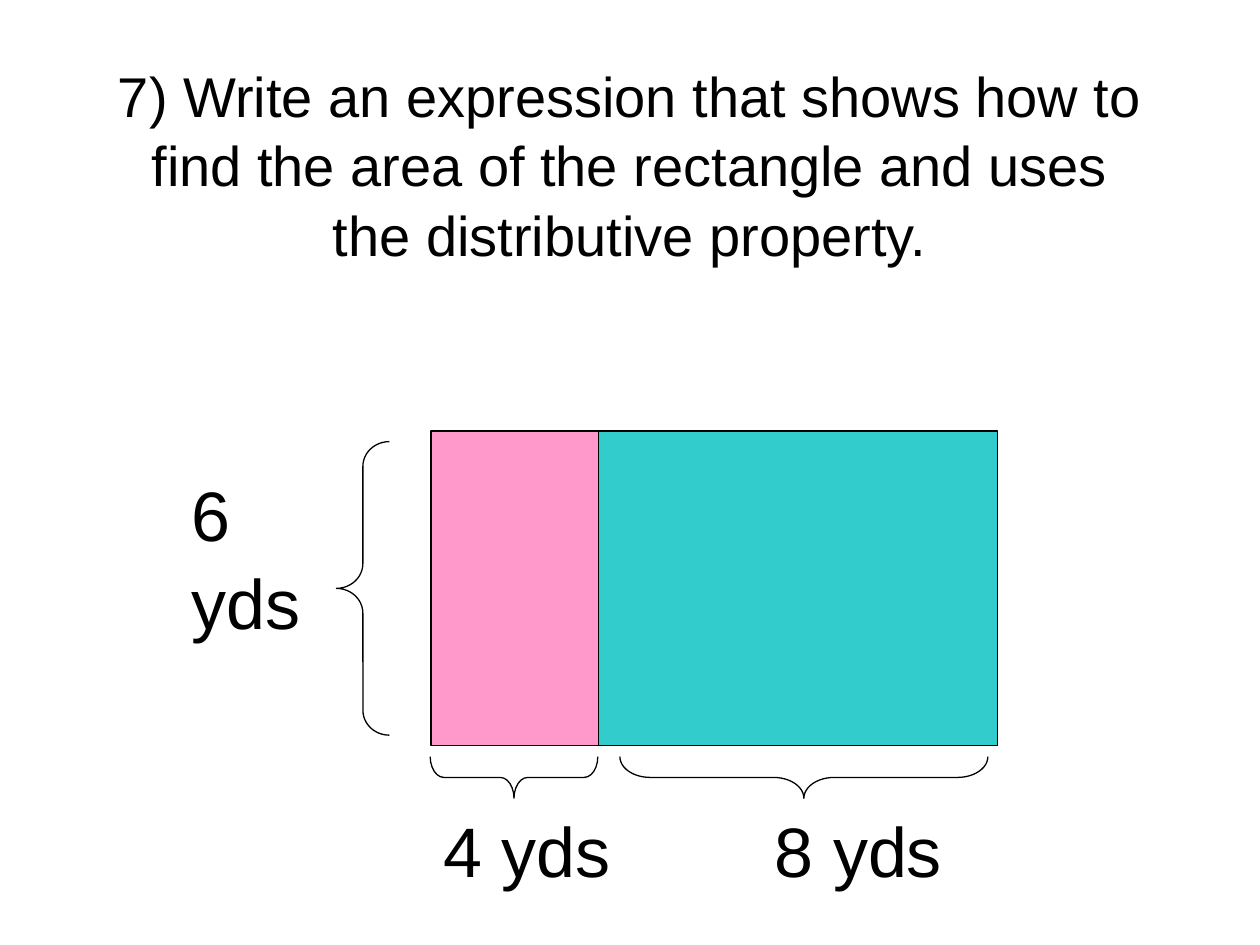
from pptx import Presentation
from pptx.dml.color import RGBColor
from pptx.enum import shapes, text
from pptx.util import Inches, Pt

BLACK = RGBColor(0, 0, 0)
PINK = RGBColor(0xFF, 0x99, 0xCC)
TEAL = RGBColor(0x33, 0xCC, 0xCC)

TITLE = ("7) Write an expression that shows how to find the area of the "
         "rectangle and uses the distributive property.")
TOP, HEIGHT = 3.42, 2.5
# left, width, fill
PARTS = [(3.42, 1.33, PINK), (4.75, 3.17, TEAL)]
# text, left, top, width, height
LABELS = [
    ("6 yds", 1.42, 3.67, 1.25, 1.43),
    ("4 yds", 3.42, 6.33, 1.67, 0.77),
    ("8 yds", 6.05, 6.33, 2.61, 0.77),
]
# centre x, centre y, depth, span, curve, rotation
BRACES = [
    (2.88, 4.67, 0.42, 2.33, 0.47, 0),
    (6.38, 6.17, 0.33, 2.92, 0.73, 270),
    (4.08, 6.17, 0.33, 1.33, 0.33, 270),
]


def write(tf, words, size, align):
    tf.word_wrap = True
    p = tf.paragraphs[0]
    p.text = words
    p.alignment = align
    p.line_spacing = 1.04
    p.font.name = "Arial"
    p.font.size = Pt(size)
    p.font.color.rgb = BLACK


def add_outlined(s, kind, *box):
    sp = s.shapes.add_shape(kind, *map(Inches, box))
    sp.shadow.inherit = False
    sp.line.color.rgb = BLACK
    sp.line.width = Pt(0.75)
    return sp


prs = Presentation()
prs.slide_width, prs.slide_height = Inches(10), Inches(7.5)
s = prs.slides.add_slide(prs.slide_layouts[5])

# Question
title = s.shapes.title
title.left, title.top, title.width, title.height = map(
    Inches, (0.75, 0.67, 8.5, 1.25))
title.text_frame.vertical_anchor = text.MSO_ANCHOR.MIDDLE
write(title.text_frame, TITLE, 32, text.PP_ALIGN.CENTER)

# Two-part rectangle
for left, width, fill in PARTS:
    sp = add_outlined(s, shapes.MSO_SHAPE.RECTANGLE, left, TOP, width, HEIGHT)
    sp.fill.solid()
    sp.fill.fore_color.rgb = fill

# Side lengths
for words, *box in LABELS:
    tf = s.shapes.add_textbox(*map(Inches, box)).text_frame
    write(tf, words, 40, text.PP_ALIGN.LEFT)

# Braces, placed by their centres
for x, y, depth, span, curve, rotation in BRACES:
    sp = add_outlined(s, shapes.MSO_SHAPE.LEFT_BRACE,
                      x - depth / 2, y - span / 2, depth, span)
    sp.fill.background()
    sp.adjustments[0] = curve
    sp.rotation = rotation

prs.save("out.pptx")
